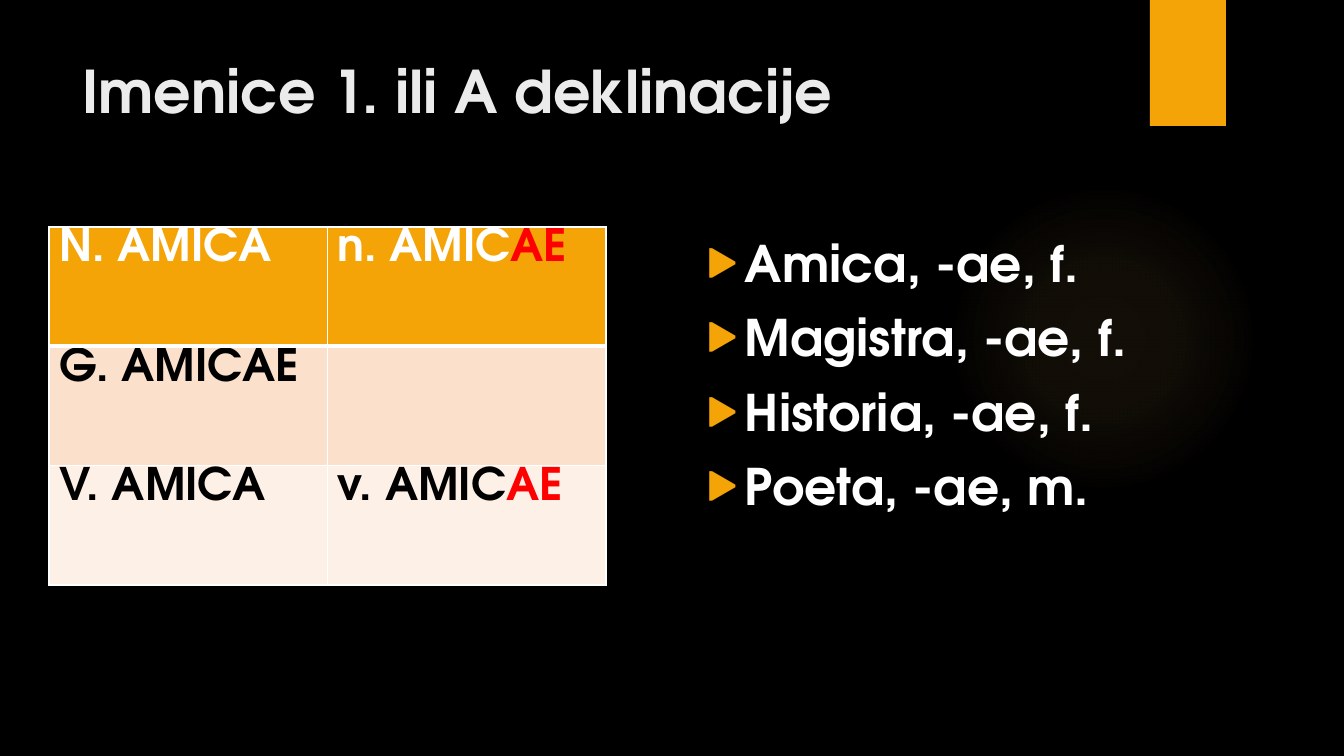
from lxml import etree
from pptx import Presentation
from pptx.dml.color import RGBColor
from pptx.enum.shapes import MSO_SHAPE
from pptx.enum.text import MSO_ANCHOR, MSO_AUTO_SIZE, PP_ALIGN
from pptx.oxml.ns import qn
from pptx.util import Emu, Pt

OVAL, RECTANGLE = MSO_SHAPE.OVAL, MSO_SHAPE.RECTANGLE
TOP, LEFT, FIXED = MSO_ANCHOR.TOP, PP_ALIGN.LEFT, MSO_AUTO_SIZE.NONE
EMU_PER_PX = 914400 / 100.8
TITLE_ONLY = 5

COLORS = {
    "background": "000000", "accent": "F5A408", "glow": "FAC96A",
    "title": "EBEBEB", "white": "FFFFFF", "black": "000000",
    "ending": "FF0000", "band_dark": "FBE0CC", "band_light": "FDF0E7",
}
FONT = "TeX Gyre Adventor"
GLOW_STOPS = [(0, 7), (36, 6), (69, 0)]
DECLENSION = [
    ("accent", "white", [("N. AMICA", ""), ("n. AMIC", "AE")]),
    ("band_dark", "black", [("G. AMICAE", ""), ("", "")]),
    ("band_light", "black", [("V. AMICA", ""), ("v. AMIC", "AE")]),
]
NOUNS = ["Amica, -ae, f.", "Magistra, -ae, f.", "Historia, -ae, f.", "Poeta, -ae, m."]


def px(length):
    return Emu(round(length * EMU_PER_PX))


def color(name):
    return RGBColor.from_string(COLORS[name])


def add_xml(parent, tag, **attributes):
    return etree.SubElement(parent, qn(tag), {key: str(value) for key, value in attributes.items()})


class SlideBuilder:
    """Draws the elements of one slide in a shared style."""

    def __init__(self, presentation):
        self.slide = presentation.slides.add_slide(presentation.slide_layouts[TITLE_ONLY])
        self.shapes = self.slide.shapes
        background = self.slide.background.fill
        background.solid()
        background.fore_color.rgb = color("background")

    def style(self, paragraph, size, font_color):
        font = paragraph.font
        font.name, font.size, font.bold = FONT, Pt(size), True
        font.color.rgb = color(font_color)

    def shape(self, kind, left, top, width, height, fill):
        shape = self.shapes.add_shape(kind, px(left), px(top), px(width), px(height))
        shape.shadow.inherit = False
        shape.fill.solid()
        shape.fill.fore_color.rgb = color(fill)
        shape.line.fill.background()
        return shape

    def glow(self, left, top, size):
        glow = self.shape(OVAL, left, top, size, size, "glow")
        properties = glow.element.spPr
        gradient = etree.Element(qn("a:gradFill"), rotWithShape="1")
        stops = add_xml(gradient, "a:gsLst")
        for position, opacity in GLOW_STOPS:
            stop = add_xml(stops, "a:gs", pos=position * 1000)
            tint = add_xml(stop, "a:srgbClr", val=COLORS["glow"])
            add_xml(tint, "a:alpha", val=opacity * 1000)
        center = add_xml(gradient, "a:path", path="circle")
        add_xml(center, "a:fillToRect", l=50000, t=50000, r=50000, b=50000)
        properties.replace(properties.find(qn("a:solidFill")), gradient)

    def title(self, text, left, top, width, height):
        title = self.shapes.title
        title.left, title.top, title.width, title.height = map(px, (left, top, width, height))
        frame = title.text_frame
        frame.text = text
        frame.word_wrap, frame.auto_size, frame.vertical_anchor = True, FIXED, TOP
        heading = frame.paragraphs[0]
        heading.alignment = LEFT
        self.style(heading, 42, "title")

    def cell_borders(self, cell, top_width, bottom_width):
        properties = cell._tc.get_or_add_tcPr()
        widths = {"a:lnL": 1, "a:lnR": 1, "a:lnT": top_width, "a:lnB": bottom_width}
        for tag, width in widths.items():
            border = add_xml(properties, tag, w=Pt(width))
            add_xml(add_xml(border, "a:solidFill"), "a:srgbClr", val=COLORS["white"])

    def table(self, rows, left, top, width, height):
        frame = self.shapes.add_table(len(rows), len(rows[0][2]), px(left), px(top), px(width), px(height))
        for row_index, (fill, text_color, forms) in enumerate(rows):
            for column_index, (stem, ending) in enumerate(forms):
                cell = frame.table.cell(row_index, column_index)
                self.cell_borders(cell, 3 if row_index == 1 else 1, 3 if row_index == 0 else 1)
                cell.fill.solid()
                cell.fill.fore_color.rgb = color(fill)
                form = cell.text_frame.paragraphs[0]
                form.line_spacing = 0.9
                self.style(form, 32, text_color)
                if stem:
                    form.add_run().text = stem
                if ending:
                    suffix = form.add_run()
                    suffix.text = ending
                    suffix.font.color.rgb = color("ending")

    def bullets(self, items, left, top, width, height):
        frame = self.shapes.add_textbox(px(left), px(top), px(width), px(height)).text_frame
        frame.word_wrap = True
        for index, item in enumerate(items):
            entry = frame.add_paragraph() if index else frame.paragraphs[0]
            entry.text = item
            properties = entry._p.get_or_add_pPr()
            properties.set("marL", str(px(38)))
            properties.set("indent", str(-px(38)))
            add_xml(add_xml(properties, "a:buClr"), "a:srgbClr", val=COLORS["accent"])
            add_xml(properties, "a:buSzPct", val=80000)
            add_xml(properties, "a:buFont", typeface=FONT)
            add_xml(properties, "a:buChar", char="▶")
            if index:
                entry.space_before = Pt(10)
            self.style(entry, 36, "white")


def main():
    presentation = Presentation()
    presentation.slide_width, presentation.slide_height = px(1344), px(756)
    builder = SlideBuilder(presentation)
    builder.glow(949, 184, 310)
    builder.shape(RECTANGLE, 1150, 0, 76, 126, "accent")
    builder.title("Imenice 1. ili A deklinacije", 72, 50, 1037, 154)
    builder.table(DECLENSION, 49, 227, 557, 358)
    builder.bullets(NOUNS, 697, 227, 543, 463)
    presentation.save("out.pptx")


if __name__ == "__main__":
    main()
